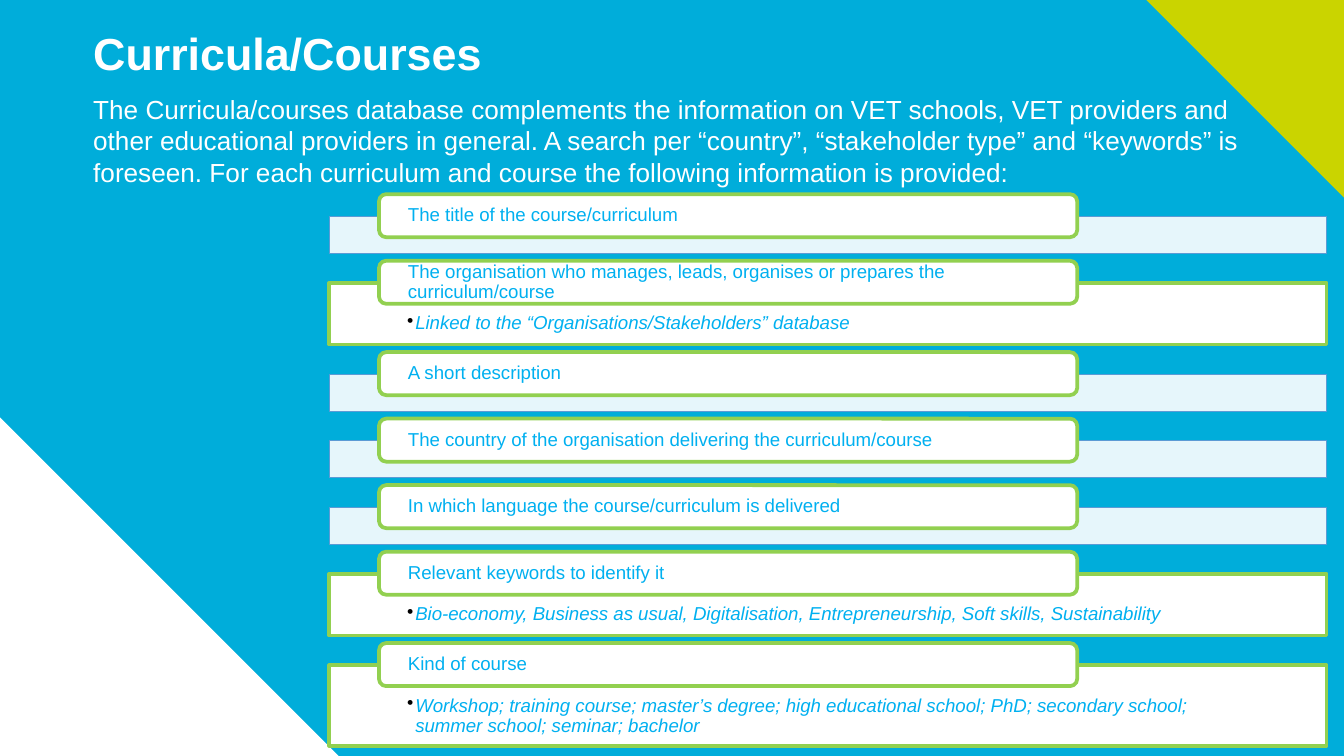
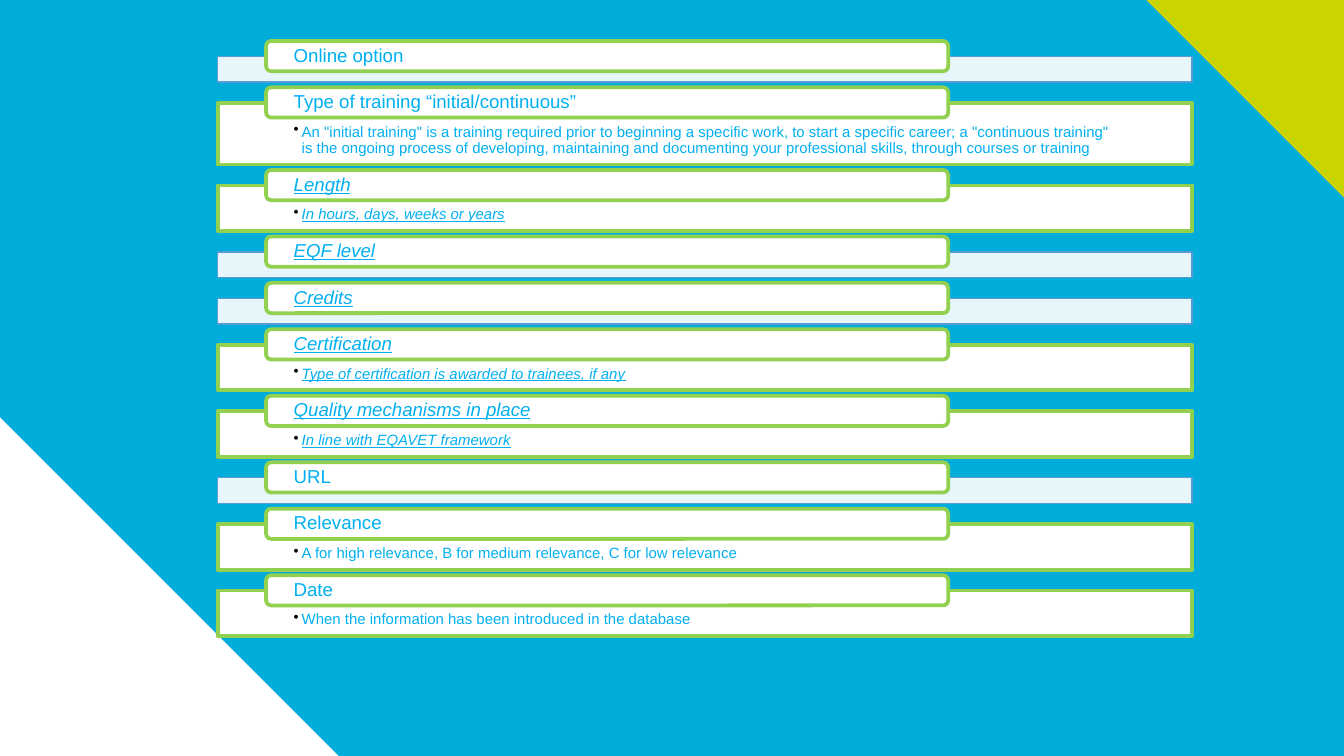
from dataclasses import dataclass
from typing import NamedTuple

from lxml.etree import SubElement
from pptx import Presentation
from pptx.dml.color import RGBColor
from pptx.enum.shapes import MSO_SHAPE
from pptx.enum.text import MSO_ANCHOR, MSO_AUTO_SIZE, PP_ALIGN
from pptx.oxml.ns import qn
from pptx.util import Emu, Pt

EMU_PER_PX = 4572
FONT = "Arial"
COLORS = {
    "background": "00ADDA",
    "corner": "CAD400",
    "white": "FFFFFF",
    "frame": "92D050",
    "thin_frame": "5B9BD5",
    "entry": "00B0F0",
    "bullet": "000000",
}


class Box(NamedTuple):
    """Left, top, width and height in px."""
    left: int
    top: int
    width: int
    height: int


@dataclass
class Field:
    """One database field: its name and an optional explanation."""
    name: str
    detail: str = ""
    lines: int = 0
    italic_detail: bool = False
    underlined: bool = False


@dataclass
class ListMeasures:
    """Sizes in px of a field list; panel heights go by lines of detail."""
    panel_heights: tuple
    gap: int
    tab_height: int
    tab_rise: int
    detail_top: int
    detail_bottom: int
    detail_size: int


COURSE_MEASURES = ListMeasures((55, 92, 120), 44, 64, 33, 46, 16, 10)
COURSE_FIELDS = [
    Field("The title of the course/curriculum"),
    Field("The organisation who manages, leads, organises or prepares the curriculum/course",
          "Linked to the “Organisations/Stakeholders” database", 1, italic_detail=True),
    Field("A short description"),
    Field("The country of the organisation delivering the curriculum/course"),
    Field("In which language the course/curriculum is delivered"),
    Field("Relevant keywords to identify it",
          "Bio-economy, Business as usual, Digitalisation, Entrepreneurship, "
          "Soft skills, Sustainability", 1, italic_detail=True),
    Field("Kind of course",
          "Workshop; training course; master’s degree; high educational school; PhD; "
          "secondary school; summer school; seminar; bachelor", 2, italic_detail=True),
]

TRAINING_MEASURES = ListMeasures((38, 68, 92), 31, 45, 23, 32, 12, 8)
TRAINING_FIELDS = [
    Field("Online option"),
    Field("Type of training “initial/continuous”",
          'An "initial training" is a training required prior to beginning a specific work, '
          'to start a specific career; a "continuous training" is the ongoing process of '
          "developing, maintaining and documenting your professional skills, "
          "through courses or training", 2),
    Field("Length", "In hours, days, weeks or years", 1, underlined=True),
    Field("EQF level", underlined=True),
    Field("Credits", underlined=True),
    Field("Certification", "Type of certification is awarded to trainees, if any", 1,
          underlined=True),
    Field("Quality mechanisms in place", "In line with EQAVET framework", 1, underlined=True),
    Field("URL"),
    Field("Relevance", "A for high relevance, B for medium relevance, C for low relevance", 1),
    Field("Date", "When the information has been introduced in the database", 1),
]


def px(length):
    """Turn px into EMU."""
    return Emu(round(length * EMU_PER_PX))


def rgb(name):
    """Look up a named colour."""
    return RGBColor.from_string(COLORS[name])


def style_font(paragraph, size, color, bold=False, italic=False, underline=False):
    """Set the font of a whole paragraph."""
    font = paragraph.font
    font.name, font.size, font.bold = FONT, Pt(size), bold
    font.italic, font.underline = italic, underline
    font.color.rgb = rgb(color)


def add_figure(slide, preset, box, fill, line=None, weight=2):
    """Draw a filled preset shape with an optional outline."""
    figure = slide.shapes.add_shape(preset, *map(px, box))
    figure.shadow.inherit = False
    figure.fill.solid()
    figure.fill.fore_color.rgb = rgb(fill)
    if line:
        figure.line.color.rgb = rgb(line)
        figure.line.width = Pt(weight)
    else:
        figure.line.fill.background()
    return figure


def add_words(slide, box, words, size, bold=False):
    """Write white text straight on the background."""
    frame = slide.shapes.add_textbox(*map(px, box)).text_frame
    frame.word_wrap = True
    frame.auto_size = MSO_AUTO_SIZE.SHAPE_TO_FIT_TEXT
    frame.text = words
    style_font(frame.paragraphs[0], size, "white", bold)


def fill_entry(figure, words, insets, anchor):
    """Put left-aligned text in a figure and return its paragraph."""
    frame = figure.text_frame
    frame.word_wrap = True
    frame.vertical_anchor = anchor
    (frame.margin_left, frame.margin_top,
     frame.margin_right, frame.margin_bottom) = map(px, insets)
    frame.text = words
    paragraph = frame.paragraphs[0]
    paragraph.alignment = PP_ALIGN.LEFT
    paragraph.line_spacing = 0.9
    return paragraph


def add_bullet(paragraph, indent, size):
    """Give a paragraph a hanging bullet, sized by its first run."""
    paragraph.level = 1
    properties = paragraph._p.get_or_add_pPr()
    properties.set("marL", str(px(indent)))
    properties.set("indent", str(-px(indent)))
    bullet_color = SubElement(properties, qn("a:buClr"))
    SubElement(bullet_color, qn("a:srgbClr"), val=COLORS["bullet"])
    SubElement(properties, qn("a:buChar"), char="•")
    paragraph.runs[0].font.size = Pt(size)


def add_panel(slide, box, field, measures):
    """Draw the wide panel behind a field name, with its detail if any."""
    if not field.detail:
        panel = add_figure(slide, MSO_SHAPE.RECTANGLE, box, "white", "thin_frame", 0.75)
        fill_color = panel._element.spPr.find(".//" + qn("a:srgbClr"))
        SubElement(fill_color, qn("a:alpha"), val="90000")
        return
    panel = add_figure(slide, MSO_SHAPE.RECTANGLE, box, "white", "frame")
    side = round(box.width * 0.078)
    insets = (side, measures.detail_top, side, measures.detail_bottom)
    detail = fill_entry(panel, field.detail, insets, MSO_ANCHOR.TOP)
    add_bullet(detail, 12, measures.detail_size)
    style_font(detail, measures.detail_size, "entry",
               italic=field.italic_detail or field.underlined, underline=field.underlined)


def add_tab(slide, box, field, side):
    """Draw the rounded tab that holds a field name."""
    tab = add_figure(slide, MSO_SHAPE.ROUNDED_RECTANGLE, box, "white", "frame")
    name = fill_entry(tab, field.name, (side, 0, side, 0), MSO_ANCHOR.MIDDLE)
    style_font(name, 10, "entry", italic=field.underlined, underline=field.underlined)


def add_field_list(slide, left, top, width, fields, measures):
    """Stack the fields downwards from the top of the first tab."""
    for field in fields:
        panel_top = top + measures.tab_rise
        panel_height = measures.panel_heights[field.lines]
        add_panel(slide, Box(left, panel_top, width, panel_height), field, measures)
        tab_box = Box(left + round(width * 0.05), top, round(width * 0.7), measures.tab_height)
        add_tab(slide, tab_box, field, round(width * 0.027))
        top += panel_height + measures.gap


def add_backdrop(deck, page):
    """Start a blue slide with its two corner triangles."""
    slide = deck.slides.add_slide(deck.slide_layouts[6])
    slide.background.fill.solid()
    slide.background.fill.fore_color.rgb = rgb("background")
    upper, lower = 294, 504
    corner = add_figure(slide, MSO_SHAPE.RIGHT_TRIANGLE,
                        Box(page.width - upper, 0, upper, upper), "corner")
    corner.rotation = 180
    add_figure(slide, MSO_SHAPE.RIGHT_TRIANGLE,
               Box(0, page.height - lower, lower, lower), "white")
    return slide


def build_courses_slide(deck, page):
    """Introduce the database and list its first fields."""
    slide = add_backdrop(deck, page)
    add_words(slide, Box(119, 28, 684, 100), "Curricula/Courses", 24, bold=True)
    add_words(slide, Box(119, 129, 1756, 216),
              "The Curricula/courses database complements the information on VET schools, "
              "VET providers and other educational providers in general. A search per "
              "“country”, “stakeholder type” and “keywords” is foreseen. For each curriculum "
              "and course the following information is provided:", 14)
    add_field_list(slide, 490, 289, 1484, COURSE_FIELDS, COURSE_MEASURES)


def build_training_slide(deck, page):
    """List the remaining fields."""
    slide = add_backdrop(deck, page)
    add_field_list(slide, 324, 61, 1450, TRAINING_FIELDS, TRAINING_MEASURES)


def main():
    """Build and save the deck."""
    page = Box(0, 0, 2000, 1125)
    deck = Presentation()
    deck.slide_width, deck.slide_height = px(page.width), px(page.height)
    build_courses_slide(deck, page)
    build_training_slide(deck, page)
    deck.save("out.pptx")


if __name__ == "__main__":
    main()
